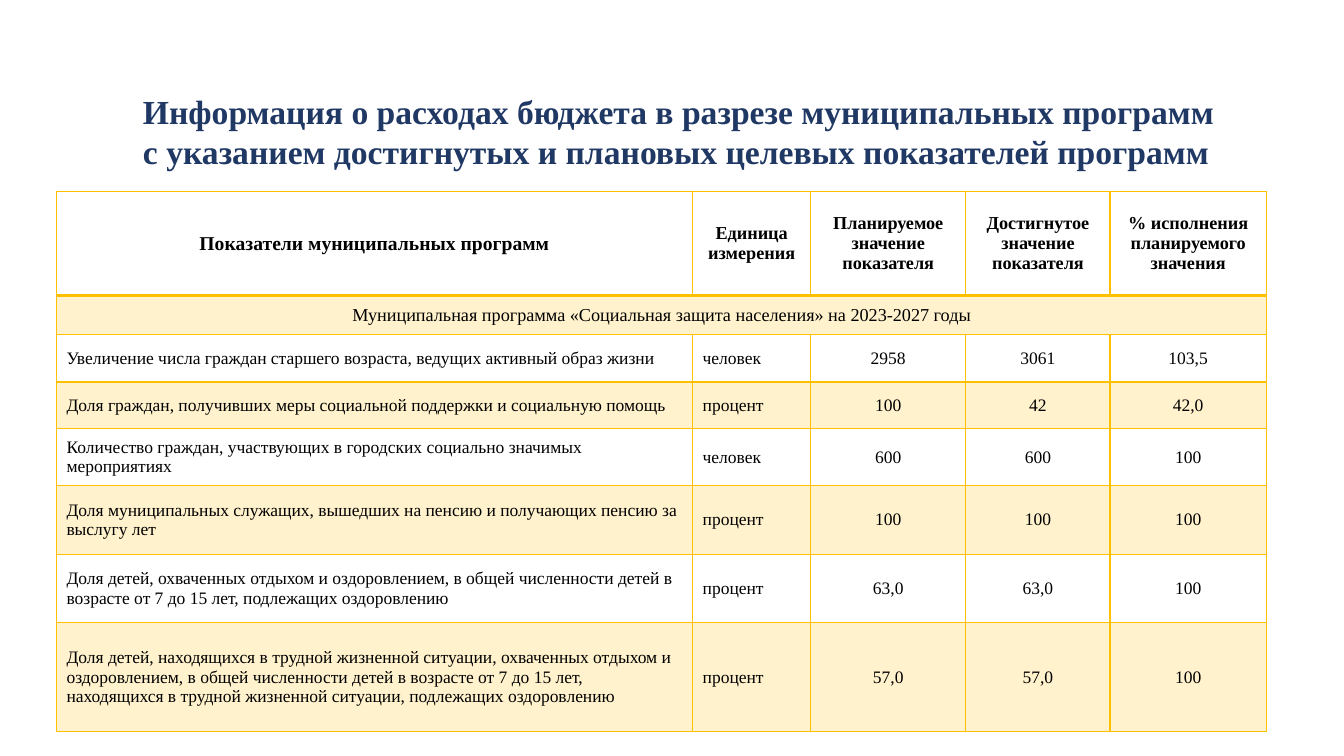
from lxml import etree
from pptx import Presentation
from pptx.dml.color import RGBColor
from pptx.enum.text import MSO_ANCHOR, MSO_AUTO_SIZE, PP_ALIGN
from pptx.oxml.ns import qn
from pptx.util import Inches, Pt

# Content
TITLE = ("Информация о расходах бюджета в разрезе муниципальных программ \v"
         "с указанием достигнутых и плановых целевых показателей программ")
HEADER = ("Показатели муниципальных программ", "Единица измерения",
          "Планируемое значение показателя", "Достигнутое значение показателя",
          "% исполнения планируемого значения")
PROGRAM = "Муниципальная программа «Социальная защита населения» на 2023-2027 годы"
INDICATORS = [
    ("Увеличение числа граждан старшего возраста, ведущих активный образ жизни",
     "человек", "2958", "3061", "103,5"),
    ("Доля граждан, получивших меры социальной поддержки и социальную помощь",
     "процент", "100", "42", "42,0"),
    ("Количество граждан, участвующих в городских социально значимых мероприятиях",
     "человек", "600", "600", "100"),
    ("Доля муниципальных служащих, вышедших на пенсию и получающих пенсию за "
     "выслугу лет", "процент", "100", "100", "100"),
    ("Доля детей, охваченных отдыхом и оздоровлением, в общей численности детей в "
     "возрасте от 7 до 15 лет, подлежащих оздоровлению",
     "процент", "63,0", "63,0", "100"),
    ("Доля детей, находящихся в трудной жизненной ситуации, охваченных отдыхом и "
     "оздоровлением, в общей численности детей в возрасте от 7 до 15 лет, "
     "находящихся в трудной жизненной ситуации, подлежащих оздоровлению",
     "процент", "57,0", "57,0", "100"),
]
COL_WIDTHS = (6.31, 1.17, 1.54, 1.43, 1.55)
ROW_HEIGHTS = (1.03, 0.39, 0.47, 0.46, 0.57, 0.68, 0.68, 1.08)

FONT = "Times New Roman"
NAVY = RGBColor(0x20, 0x38, 0x64)
BLACK = RGBColor(0, 0, 0)
GOLD = RGBColor(0xFF, 0xC0, 0x00)
TINT_ALPHA = "20000"


def set_font(p, size, color, bold):
    p.font.name, p.font.size, p.font.bold = FONT, Pt(size), bold
    p.font.color.rgb = color


def set_borders(cell, bottom):
    tc_pr = cell._tc.get_or_add_tcPr()
    for side, width in (("L", 1), ("R", 1), ("T", 1), ("B", bottom)):
        ln = etree.SubElement(tc_pr, qn(f"a:ln{side}"), w=str(Pt(width)))
        fill = etree.SubElement(ln, qn("a:solidFill"))
        etree.SubElement(fill, qn("a:srgbClr"), val=str(GOLD))


def set_fill(cell, tinted):
    if not tinted:
        cell.fill.background()
        return
    cell.fill.solid()
    cell.fill.fore_color.rgb = GOLD
    color = cell._tc.tcPr.find(qn("a:solidFill")).find(qn("a:srgbClr"))
    etree.SubElement(color, qn("a:alpha"), val=TINT_ALPHA)


def set_margins(cell, side, top, bottom):
    cell.margin_left = cell.margin_right = Inches(side)
    cell.margin_top, cell.margin_bottom = Inches(top), Inches(bottom)


prs = Presentation()
prs.slide_width, prs.slide_height = Inches(13.33), Inches(7.5)
s = prs.slides.add_slide(prs.slide_layouts[6])

# Table grid
rows = [HEADER, (PROGRAM, "", "", "", "")] + INDICATORS
table = s.shapes.add_table(len(rows), len(HEADER), Inches(0.56), Inches(1.9),
                           Inches(sum(COL_WIDTHS)), Inches(sum(ROW_HEIGHTS))).table
table.first_row = table.horz_banding = False
for column, width in zip(table.columns, COL_WIDTHS):
    column.width = Inches(width)
for row, height in zip(table.rows, ROW_HEIGHTS):
    row.height = Inches(height)

# Table cells: odd rows are tinted
for i, values in enumerate(rows):
    for j, text in enumerate(values):
        cell = table.cell(i, j)
        set_borders(cell, bottom=2 if i == 0 else 1)
        set_fill(cell, tinted=i % 2 == 1)
        cell.vertical_anchor = MSO_ANCHOR.MIDDLE
        set_margins(cell, 0.05 if i < 2 else 0.1, 0.05, 0.05)
        p = cell.text_frame.paragraphs[0]
        p.text = text
        p.alignment = PP_ALIGN.CENTER if i < 2 or j > 1 else PP_ALIGN.LEFT
        size = 14 if i == j == 0 else 13 if i < 2 else 12.5
        set_font(p, size, BLACK, bold=i == 0)
table.cell(1, 0).merge(table.cell(1, len(HEADER) - 1))
set_margins(table.cell(2, 4), 0.01, 0.01, 0)

# Title
tf = s.shapes.add_textbox(Inches(1.32), Inches(0.85), Inches(11.03), Inches(0.91)).text_frame
tf.word_wrap = True
tf.auto_size = MSO_AUTO_SIZE.SHAPE_TO_FIT_TEXT
p = tf.paragraphs[0]
p.text = TITLE
set_font(p, 24, NAVY, bold=True)

prs.save("out.pptx")
